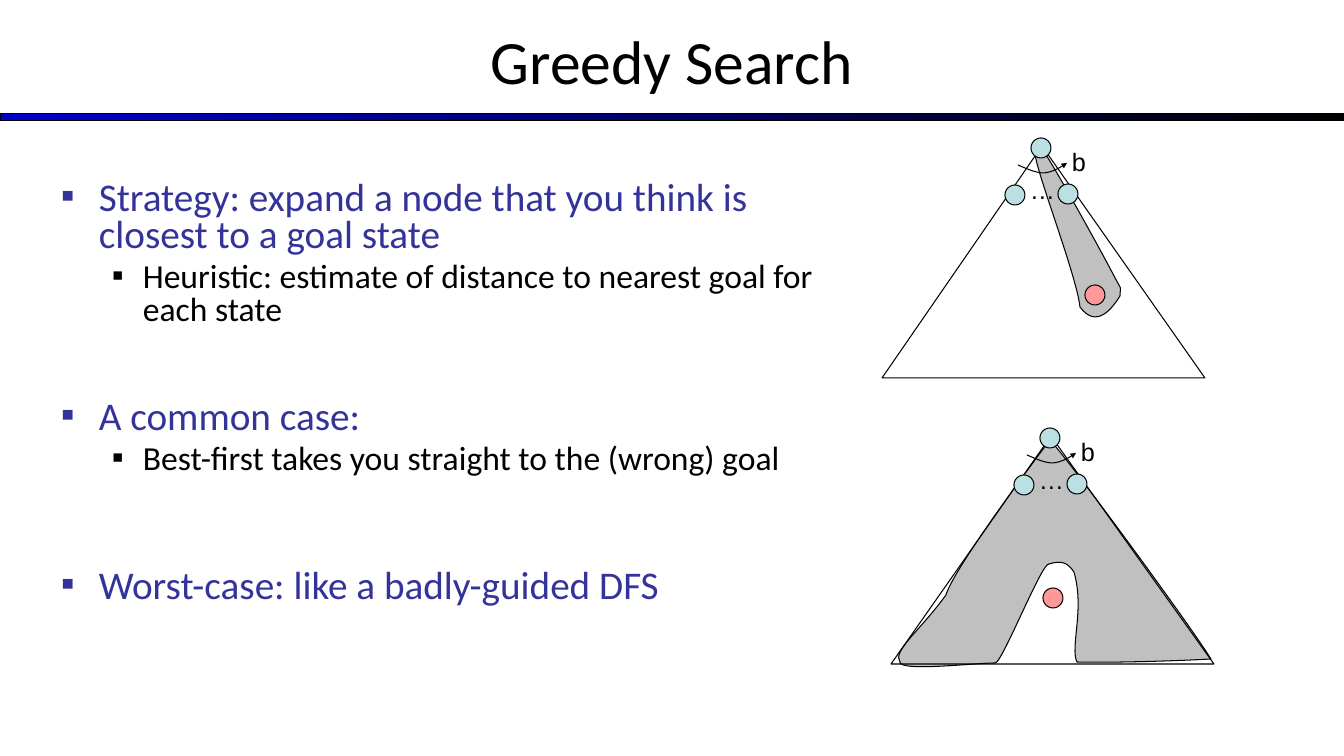
from dataclasses import dataclass

from lxml.etree import SubElement
from pptx import Presentation
from pptx.dml.color import RGBColor
from pptx.enum.shapes import MSO_SHAPE as Preset
from pptx.enum.text import MSO_ANCHOR as Anchor, PP_ALIGN as Align
from pptx.oxml.ns import qn
from pptx.util import Emu, Pt

EMU_PER_PX = 914400 / 100.8
BLACK, INDIGO, BLUE = "000000", "333399", "0000CC"
NODE_FILL, GOAL_FILL, EXPLORED_FILL = "BBE0E3", "FF9999", "C0C0C0"
NODE_SIZE = 20

Point = tuple[int, int]


@dataclass(frozen=True)
class Bullet:
    text: str
    level: int
    space_before: float


@dataclass(frozen=True)
class SearchTree:
    """Top left of the root node, height to the base, goal offset, explored outline."""
    root: Point
    base: int
    goal: Point
    explored: list[Point]


BULLETS = [
    Bullet("Strategy: expand a node that you think is closest to a goal state", 0, 0),
    Bullet("Heuristic: estimate of distance to nearest goal for each state", 1, 4.8),
    Bullet("A common case:", 0, 52),
    Bullet("Best-first takes you straight to the (wrong) goal", 1, 4.8),
    Bullet("Worst-case: like a badly-guided DFS", 0, 66),
]
# Per level: size in pt, colour, left margin and hanging indent in px
LEVELS = [(28, INDIGO, 38, 38), (24, BLACK, 82, 31)]

# Outlines list a start point, then two controls and an end for each curve
TREES = [
    SearchTree((1031, 138), 240, (54, 147), [
        (1048, 158),
        (1060, 177), (1100, 249), (1112, 272),
        (1124, 295), (1120, 284), (1120, 296),
        (1113, 307), (1097, 330), (1080, 307),
        (1077, 278), (1041, 184), (1036, 159),
        (1030, 134), (1036, 139), (1048, 158),
    ]),
    SearchTree((1040, 428), 236, (3, 160), [
        (1056, 447),
        (1085, 482), (1192, 628), (1211, 659),
        (1196, 660), (1125, 663), (1077, 662),
        (1070, 647), (1085, 609), (1074, 572),
        (1068, 563), (1062, 560), (1049, 564),
        (1042, 562), (1001, 666), (995, 663),
        (974, 663), (900, 672), (900, 662),
        (892, 651), (921, 630), (946, 595),
        (954, 569), (1026, 472), (1044, 448),
        (1062, 422), (1054, 447), (1056, 447),
    ]),
]
BRANCHING_ARC = [(-13, 27), (-4, 31), (5, 35), (13, 35), (21, 34), (29, 30), (36, 25)]


def px(length: float) -> Emu:
    return Emu(round(length * EMU_PER_PX))


def rgb(colour: str) -> RGBColor:
    return RGBColor.from_string(colour)


def shift(points: list[Point], origin: Point) -> list[Point]:
    return [(x + origin[0], y + origin[1]) for x, y in points]


def style(shape, fill: str | None) -> None:
    shape.shadow.inherit = False
    shape.line.color.rgb = rgb(BLACK)
    shape.line.width = Pt(0.75)
    if fill:
        shape.fill.solid()
        shape.fill.fore_color.rgb = rgb(fill)
    else:
        shape.fill.background()


def add_outline(slide, points: list[Point], fill: str | None = None, closed: bool = True):
    corners = [(px(x), px(y)) for x, y in points]
    builder = slide.shapes.build_freeform(*corners[0], scale=1.0)
    builder.add_line_segments(corners[1:], close=closed)
    outline = builder.convert_to_shape()
    style(outline, fill)
    return outline


def bend(outline) -> None:
    """Make each three straight segments one cubic Bézier curve."""
    segments = list(outline._element.iter(qn("a:lnTo")))
    for first, second, third in zip(segments[::3], segments[1::3], segments[2::3]):
        first.tag = qn("a:cubicBezTo")
        for segment in (second, third):
            first.append(segment[0])
            segment.getparent().remove(segment)


def add_node(slide, position: Point, fill: str = NODE_FILL) -> None:
    x, y = position
    node = slide.shapes.add_shape(Preset.OVAL, px(x), px(y), px(NODE_SIZE), px(NODE_SIZE))
    style(node, fill)


def add_frame(slide, left: int, top: int, width: int, height: int,
              anchor: Anchor = Anchor.TOP):
    frame = slide.shapes.add_textbox(px(left), px(top), px(width), px(height)).text_frame
    frame.word_wrap = True
    frame.vertical_anchor = anchor
    return frame


def write(paragraph, text: str, *, size: float, font: str = "Calibri",
          colour: str = BLACK, align: Align = Align.LEFT) -> None:
    paragraph.alignment = align
    run = paragraph.add_run()
    run.text = text
    run.font.name = font
    run.font.size = Pt(size)
    run.font.color.rgb = rgb(colour)


def add_header(slide) -> None:
    rule = slide.shapes.add_shape(Preset.RECTANGLE, 0, px(114), px(1344), px(7))
    style(rule, None)
    rule.fill.gradient()
    rule.fill.gradient_angle = 0
    for stop, (position, colour) in zip(rule.fill.gradient_stops, ((0, BLUE), (1, BLACK))):
        stop.position = position
        stop.color.rgb = rgb(colour)
    title = add_frame(slide, 0, -3, 1344, 126, Anchor.MIDDLE)
    write(title.paragraphs[0], "Greedy Search", size=44, align=Align.CENTER)


def add_bullets(slide) -> None:
    body = add_frame(slide, 51, 176, 781, 537)
    for i, bullet in enumerate(BULLETS):
        paragraph = body.add_paragraph() if i else body.paragraphs[0]
        size, colour, margin, hanging = LEVELS[bullet.level]
        paragraph.level = bullet.level
        paragraph.line_spacing = 0.8
        if i:
            paragraph.space_before = Pt(bullet.space_before)
        properties = paragraph._p.get_or_add_pPr()
        properties.set("marL", str(px(margin)))
        properties.set("indent", str(px(-hanging)))
        bullet_colour = SubElement(properties, qn("a:buClr"))
        SubElement(bullet_colour, qn("a:srgbClr"), val=colour)
        SubElement(properties, qn("a:buFont"), typeface="Arial")
        SubElement(properties, qn("a:buChar"), char="▪")
        write(paragraph, bullet.text, size=size, colour=colour)


def add_label(slide, text: str, position: Point, width: int) -> None:
    label = add_frame(slide, *position, width, 40)
    write(label.paragraphs[0], text, size=18, font="Arial")


def add_tree(slide, tree: SearchTree) -> None:
    bend(add_outline(slide, tree.explored, EXPLORED_FILL))
    triangle = [(-149, tree.base), (174, tree.base), (11, 8)]
    add_outline(slide, shift(triangle, tree.root))
    left_child, right_child, dots, factor, goal = shift(
        [(-26, 47), (27, 46), (-11, 31), (31, 3), tree.goal], tree.root)
    add_node(slide, left_child)
    add_node(slide, right_child)
    add_label(slide, "…", dots, 30)
    arc = add_outline(slide, shift(BRANCHING_ARC, tree.root), closed=False)
    bend(arc)
    SubElement(arc.line._get_or_add_ln(), qn("a:tailEnd"), type="triangle", w="sm", len="sm")
    add_label(slide, "b", factor, 33)
    add_node(slide, goal, GOAL_FILL)
    add_node(slide, tree.root)


def main() -> None:
    deck = Presentation()
    deck.slide_width, deck.slide_height = px(1344), px(756)
    slide = deck.slides.add_slide(deck.slide_layouts[6])
    add_header(slide)
    add_bullets(slide)
    for tree in TREES:
        add_tree(slide, tree)
    deck.save("out.pptx")


if __name__ == "__main__":
    main()
